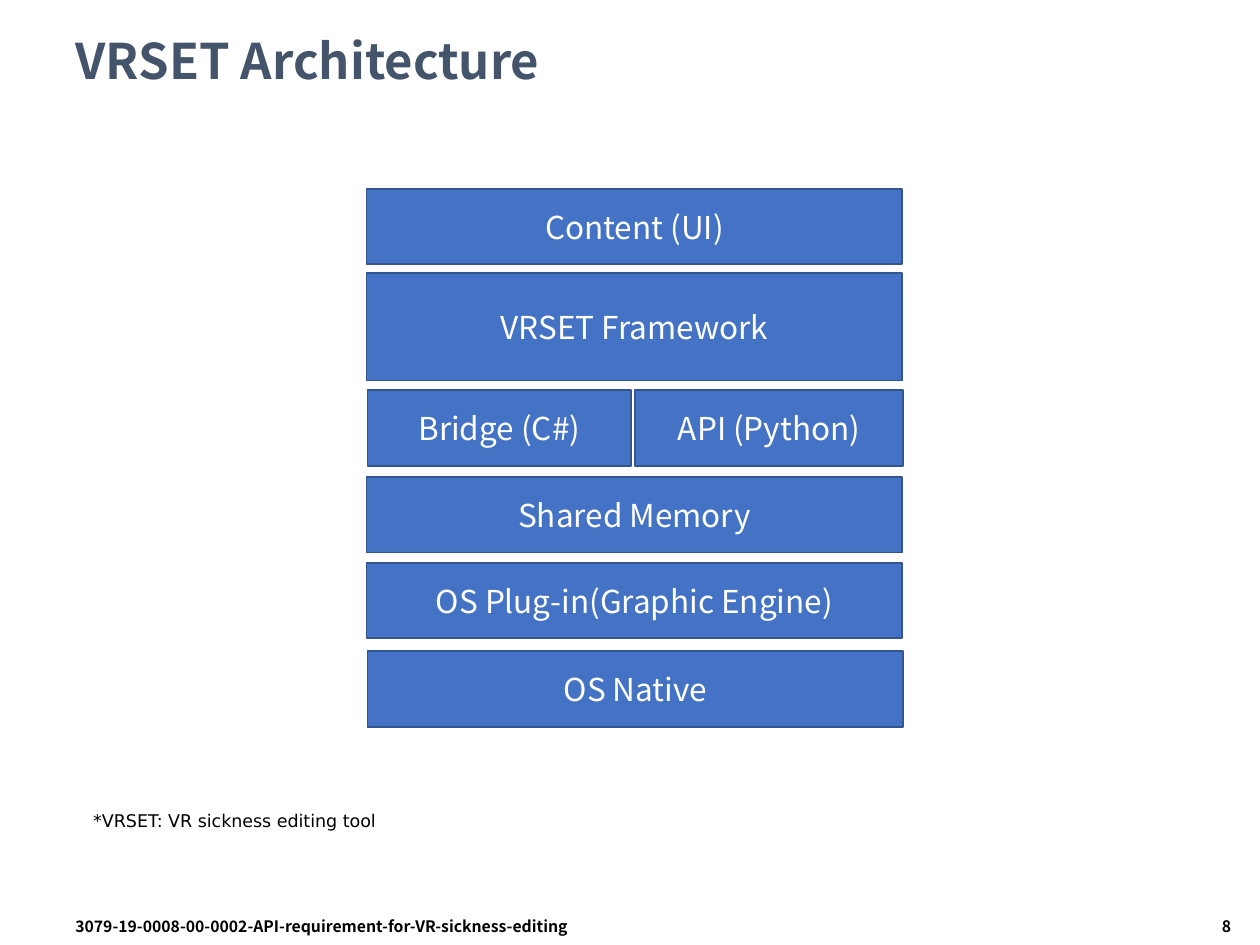
from pptx import Presentation
from pptx.dml.color import RGBColor
from pptx.enum.shapes import MSO_SHAPE
from pptx.enum.text import MSO_ANCHOR, PP_ALIGN
from pptx.util import Cm, Pt

SANS = "Noto Sans CJK KR"
NOTE_FONT = "DejaVu Sans"
SLATE = RGBColor(0x44, 0x54, 0x6A)
BLUE = RGBColor(0x44, 0x72, 0xC4)
NAVY = RGBColor(0x32, 0x54, 0x91)
WHITE = RGBColor(0xFF, 0xFF, 0xFF)
BLACK = RGBColor(0x00, 0x00, 0x00)

LAYER_HEIGHT = 1.52
STACK_WIDTH = 10.8
# Label, then left, top, width and height in cm within the stack
LAYERS = [
    ("Content (UI)", 0, 0, STACK_WIDTH, LAYER_HEIGHT),
    ("VRSET Framework", 0, 1.7, STACK_WIDTH, 2.16),
    ("Bridge (C#)", 0.02, 4.06, 5.31, LAYER_HEIGHT),
    ("API (Python)", 5.41, 4.06, 5.41, LAYER_HEIGHT),
    ("Shared Memory", 0, 5.81, STACK_WIDTH, LAYER_HEIGHT),
    ("OS Plug-in(Graphic Engine)", 0, 7.54, STACK_WIDTH, LAYER_HEIGHT),
    ("OS Native", 0.02, 9.32, STACK_WIDTH, LAYER_HEIGHT),
]


def style(para, size, color, name=SANS, bold=False, align=PP_ALIGN.LEFT):
    para.alignment = align
    font = para.font
    font.name, font.size, font.bold = name, Pt(size), bold
    font.color.rgb = color


def set_title(page, text, left, top, width, height):
    title = page.shapes.title
    title.left, title.top = Cm(left), Cm(top)
    title.width, title.height = Cm(width), Cm(height)
    title.text_frame.text = text
    title.text_frame.vertical_anchor = MSO_ANCHOR.MIDDLE
    para = title.text_frame.paragraphs[0]
    para.line_spacing = 0.9
    style(para, 28, SLATE, bold=True)


def add_text(page, text, left, top, width, height, size, wrap=True, **look):
    box = page.shapes.add_textbox(Cm(left), Cm(top), Cm(width), Cm(height))
    box.text_frame.text = text
    box.text_frame.word_wrap = wrap
    style(box.text_frame.paragraphs[0], size, BLACK, **look)


def add_stack(page, left, top):
    """Draw the architecture layers from the given top left corner."""
    for label, dx, dy, width, height in LAYERS:
        layer = page.shapes.add_shape(
            MSO_SHAPE.RECTANGLE,
            Cm(left + dx), Cm(top + dy), Cm(width), Cm(height))
        layer.shadow.inherit = False
        layer.fill.solid()
        layer.fill.fore_color.rgb = BLUE
        layer.line.color.rgb = NAVY
        layer.line.width = Pt(1)
        layer.text_frame.text = label
        layer.text_frame.vertical_anchor = MSO_ANCHOR.MIDDLE
        style(layer.text_frame.paragraphs[0], 18, WHITE,
              align=PP_ALIGN.CENTER)


def add_footer(page, left, top, width, height):
    number_width = 4.11
    name_width = width - number_width
    add_text(page, "3079-19-0008-00-0002-API-requirement-for-VR-sickness-editing",
             left, top, name_width, height, 9, bold=True)
    add_text(page, "8", left + name_width, top, number_width, height, 9,
             bold=True, align=PP_ALIGN.RIGHT)


def main():
    deck = Presentation()
    deck.slide_width, deck.slide_height = Cm(25.4), Cm(19.05)
    page = deck.slides.add_slide(deck.slide_layouts[5])
    set_title(page, "VRSET Architecture", 1.27, 0.43, 22.86, 1.7)
    add_stack(page, 7.39, 3.81)
    add_text(page, "*VRSET: VR sickness editing tool",
             1.63, 16.21, 6.71, 0.69, 10, wrap=False, name=NOTE_FONT)
    add_footer(page, 1.27, 18.36, 23.8, 0.69)
    deck.save("out.pptx")


if __name__ == "__main__":
    main()
